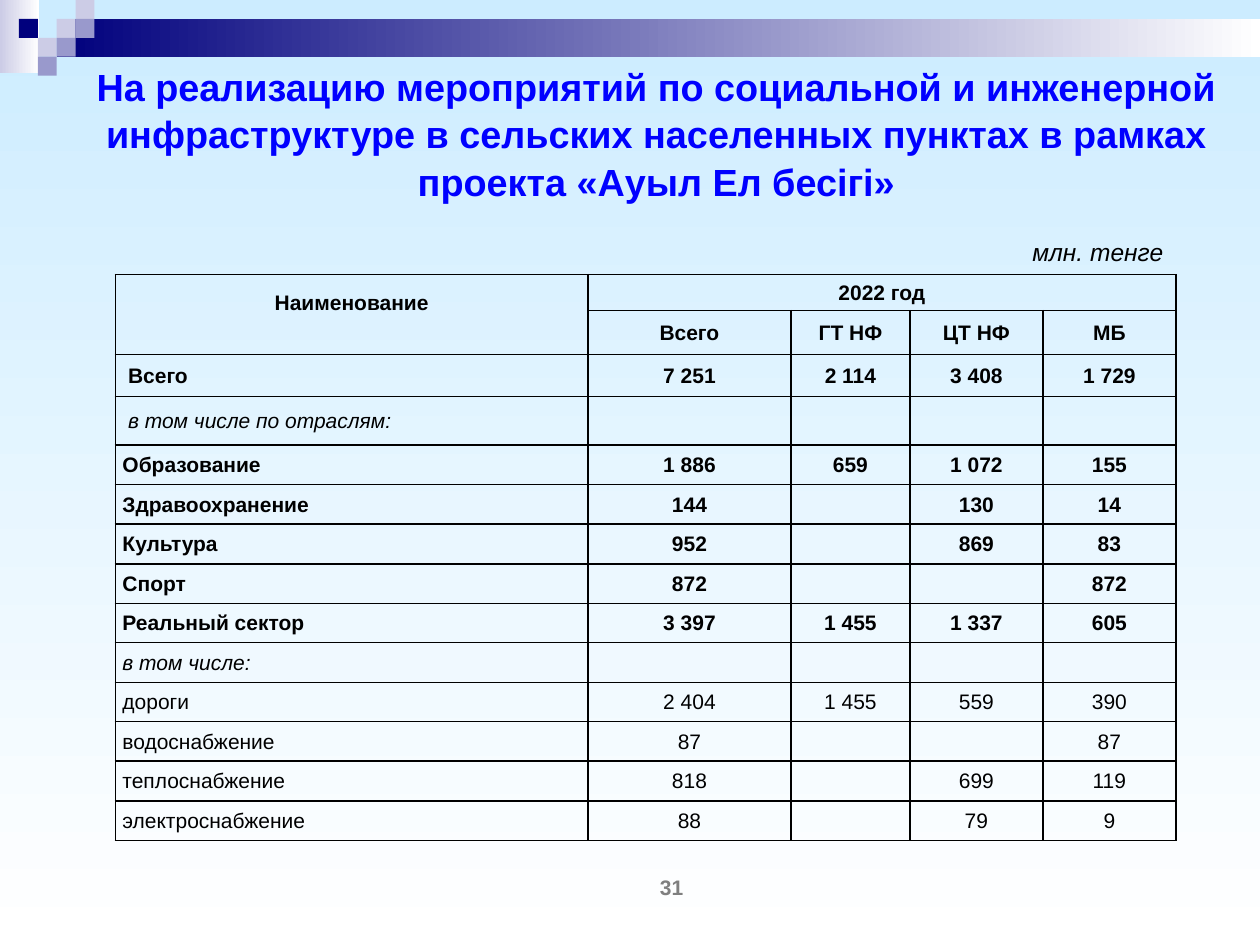
from dataclasses import dataclass

from lxml import etree
from pptx import Presentation
from pptx.dml.color import RGBColor
from pptx.enum import shapes, text
from pptx.oxml.ns import qn
from pptx.util import Pt


@dataclass(frozen=True)
class Theme:
    font: str = "Arial"
    sky: str = "CCECFF"
    white: str = "FFFFFF"
    navy: str = "00007D"
    lavender: str = "CCCCE6"
    violet: str = "9999CC"
    title: str = "0000FF"
    ink: str = "000000"
    grey: str = "7F7F7F"
    title_size: float = 21.6
    unit_size: float = 14
    body_size: float = 12


@dataclass(frozen=True)
class Block:
    left: float
    top: float
    width: float
    height: float
    color: str
    fade_to: str | None = None


@dataclass(frozen=True)
class Row:
    label: str
    values: tuple[str, ...] = ("", "", "", "")
    height: float = 22.4
    bold: bool = False
    italic: bool = False
    indent: float = 4


THEME = Theme()
LEFT, CENTER, RIGHT = text.PP_ALIGN.LEFT, text.PP_ALIGN.CENTER, text.PP_ALIGN.RIGHT
MIDDLE = text.MSO_ANCHOR.MIDDLE
TILE = 10.8
TILES = [  # column, row, color
    (3, 1, THEME.lavender), (4, 0, THEME.lavender), (4, 1, THEME.violet),
    (2, 2, THEME.lavender), (1, 1, THEME.navy), (3, 2, THEME.violet),
    (2, 3, THEME.violet),
]
BLOCKS = [
    Block(0, 0, 22.3, 41.8, THEME.lavender, THEME.white),
    Block(3 * TILE, TILE, 687.6, 21.6, THEME.navy, THEME.white),
] + [Block(col * TILE, row * TILE, TILE, TILE, color) for col, row, color in TILES]

COLUMNS = (270, 116, 68, 76, 76)
HEADINGS = ("Всего", "ГТ НФ", "ЦТ НФ", "МБ")
HEADER_HEIGHTS = (25, 20.5, 25)
ROWS = [
    Row("Всего", ("7 251", "2 114", "3 408", "1 729"), 24, bold=True, indent=7.2),
    Row("в том числе по отраслям:", height=28, italic=True, indent=7.2),
    Row("Образование", ("1 886", "659", "1 072", "155"), bold=True),
    Row("Здравоохранение", ("144", "", "130", "14"), bold=True),
    Row("Культура", ("952", "", "869", "83"), bold=True),
    Row("Спорт", ("872", "", "", "872"), bold=True),
    Row("Реальный сектор", ("3 397", "1 455", "1 337", "605"), bold=True),
    Row("в том числе:", italic=True),
    Row("дороги", ("2 404", "1 455", "559", "390")),
    Row("водоснабжение", ("87", "", "", "87")),
    Row("теплоснабжение", ("818", "", "699", "119")),
    Row("электроснабжение", ("88", "", "79", "9")),
]


def write(frame, words: str, size: float, color: str, align=CENTER,
          bold: bool = False, italic: bool = False):
    para = frame.paragraphs[0]
    para.alignment = align
    span = para.add_run()
    span.text = words
    font = span.font
    font.name, font.size, font.bold, font.italic = THEME.font, Pt(size), bold, italic
    font.color.rgb = RGBColor.from_string(color)
    return para


def set_gradient(fill, start: str, end: str, angle: float) -> None:
    fill.gradient()
    fill.gradient_angle = angle
    for stop, color in zip(fill.gradient_stops, (start, end)):
        stop.color.rgb = RGBColor.from_string(color)


def draw_block(page, block: Block) -> None:
    shape = page.shapes.add_shape(
        shapes.MSO_SHAPE.RECTANGLE,
        Pt(block.left), Pt(block.top), Pt(block.width), Pt(block.height))
    shape.shadow.inherit = False
    shape.line.fill.background()
    if block.fade_to:
        set_gradient(shape.fill, block.color, block.fade_to, 0)
    else:
        shape.fill.solid()
        shape.fill.fore_color.rgb = RGBColor.from_string(block.color)


def set_borders(cell, visible: str) -> None:
    """Draw the sides named in visible (letters of LRTB) and hide the others."""
    properties = cell._tc.get_or_add_tcPr()
    for side in "LRTB":
        line = etree.SubElement(properties, qn(f"a:ln{side}"), w=str(Pt(1)))
        if side in visible:
            solid = etree.SubElement(line, qn("a:solidFill"))
            etree.SubElement(solid, qn("a:srgbClr"), val=THEME.ink)
        else:
            etree.SubElement(line, qn("a:noFill"))


def write_cell(cell, words: str, align=CENTER, bold: bool = False,
               italic: bool = False, size: float = THEME.body_size) -> None:
    if words:
        write(cell.text_frame, words, size, THEME.ink, align, bold, italic)


def draw_table(page) -> None:
    heights = HEADER_HEIGHTS + tuple(row.height for row in ROWS)
    frame = page.shapes.add_table(
        len(heights), len(COLUMNS), Pt(66), Pt(132), Pt(sum(COLUMNS)), Pt(sum(heights)))
    table = frame.table
    table.first_row = table.horz_banding = False
    for column, width in zip(table.columns, COLUMNS):
        column.width = Pt(width)
    for index, height in enumerate(heights):
        table.rows[index].height = Pt(height)
        for cell in table.rows[index].cells:
            cell.margin_left = cell.margin_right = Pt(0.7)
            cell.margin_top, cell.margin_bottom = Pt(0.7), Pt(0)
            cell.vertical_anchor = MIDDLE
            set_borders(cell, "LRTB" if index else "B")
            cell.fill.background()

    unit, name, year = table.cell(0, 1), table.cell(1, 0), table.cell(1, 1)
    unit.merge(table.cell(0, 4))
    name.merge(table.cell(2, 0))
    year.merge(table.cell(1, 4))
    unit.margin_right = Pt(7.2)
    name.margin_bottom = Pt(13.6)
    write_cell(unit, "млн. тенге", RIGHT, italic=True, size=THEME.unit_size)
    write_cell(name, "Наименование", bold=True)
    write_cell(year, "2022 год", bold=True)
    for col, heading in enumerate(HEADINGS, 1):
        write_cell(table.cell(2, col), heading, bold=True)

    for index, row in enumerate(ROWS, len(HEADER_HEIGHTS)):
        label = table.cell(index, 0)
        label.margin_left = Pt(row.indent)
        write_cell(label, row.label, LEFT, row.bold, row.italic)
        for col, value in enumerate(row.values, 1):
            write_cell(table.cell(index, col), value, bold=row.bold)


def draw_title(page) -> None:
    title = page.shapes.title
    title.left, title.top, title.width, title.height = Pt(42.5), Pt(54), Pt(665.3), Pt(59.8)
    frame = title.text_frame
    frame.word_wrap = True
    frame.auto_size = text.MSO_AUTO_SIZE.NONE
    frame.vertical_anchor = MIDDLE
    frame.margin_bottom = Pt(20)
    para = write(frame, "На реализацию мероприятий по социальной и инженерной "
                 "инфраструктуре в сельских населенных пунктах в рамках "
                 "проекта «Ауыл Ел бесігі»", THEME.title_size, THEME.title, bold=True)
    para.line_spacing = 1.05


def draw_page_number(page) -> None:
    box = page.shapes.add_textbox(Pt(311.8), Pt(498.2), Pt(144), Pt(17.3))
    frame = box.text_frame
    frame.word_wrap = True
    frame.vertical_anchor = MIDDLE
    frame.margin_top = frame.margin_bottom = Pt(0)
    write(frame, "31", THEME.body_size, THEME.grey, bold=True)


def main() -> None:
    deck = Presentation()
    deck.slide_width, deck.slide_height = Pt(720), Pt(540)
    page = deck.slides.add_slide(deck.slide_layouts[5])
    set_gradient(page.background.fill, THEME.sky, THEME.white, 270)
    for block in BLOCKS:
        draw_block(page, block)
    draw_title(page)
    draw_table(page)
    draw_page_number(page)
    deck.save("out.pptx")


if __name__ == "__main__":
    main()
